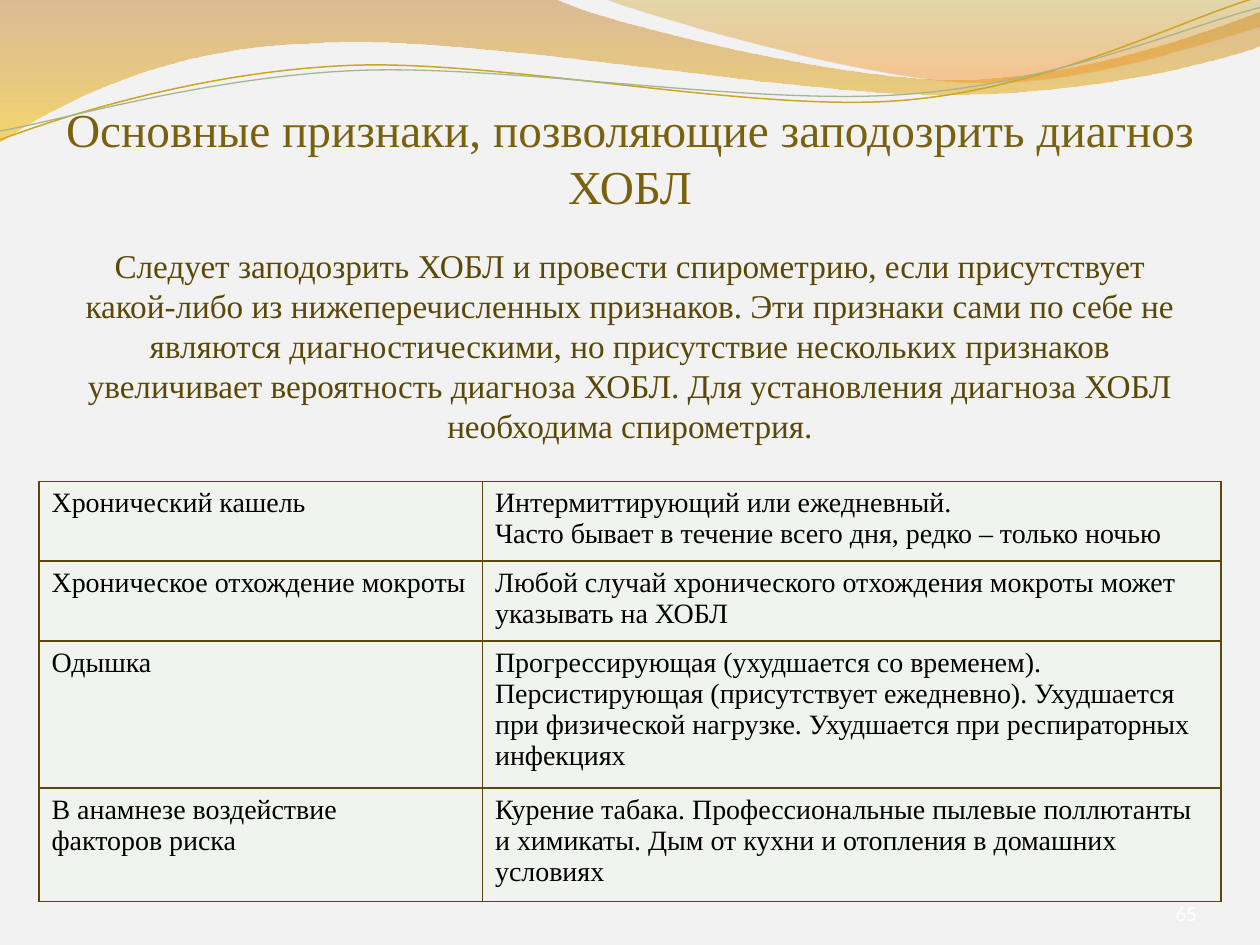
from pptx import Presentation
from pptx.dml.color import RGBColor
from pptx.enum.text import MSO_ANCHOR, PP_ALIGN
from pptx.oxml import parse_xml
from pptx.oxml.ns import nsdecls
from pptx.util import Inches, Pt

SERIF = "Times New Roman"
BROWN = "5B4809"

SIGNS = [
    ("Хронический кашель",
     "Интермиттирующий или ежедневный.\n"
     "Часто бывает в течение всего дня, редко – только ночью"),
    ("Хроническое отхождение мокроты",
     "Любой случай хронического отхождения мокроты может указывать на ХОБЛ"),
    ("Одышка",
     "Прогрессирующая (ухудшается со временем). Персистирующая (присутствует "
     "ежедневно). Ухудшается при физической нагрузке. Ухудшается при "
     "респираторных инфекциях"),
    ("В анамнезе воздействие\nфакторов риска",
     "Курение табака. Профессиональные пылевые поллютанты и химикаты. "
     "Дым от кухни и отопления в домашних\nусловиях"),
]


def color(value):
    return RGBColor.from_string(value)


class SlideBuilder:
    def __init__(self, slide, font=SERIF):
        self.slide = slide
        self.font = font

    def background(self, value):
        fill = self.slide.background.fill
        fill.solid()
        fill.fore_color.rgb = color(value)

    def outline(self, start, segments, close):
        """Draw segments of one point as lines and of three points as curves."""
        builder = self.slide.shapes.build_freeform(*map(Inches, start), scale=1.0)
        builder.add_line_segments(
            [(Inches(x), Inches(y)) for segment in segments for x, y in segment],
            close=close)
        shape = builder.convert_to_shape()
        shape.shadow.inherit = False
        line_parts = iter(shape.element.xpath(".//a:lnTo"))
        for segment in segments:
            parts = [next(line_parts) for _ in segment]
            if len(parts) == 3:
                bezier = parse_xml(f'<a:cubicBezTo {nsdecls("a")}/>')
                parts[0].addprevious(bezier)
                for part in parts:
                    bezier.append(part[0])
                    part.getparent().remove(part)
        return shape

    def wave(self, start, segments, stops):
        """Add a filled wave; stops are (position, colour, opacity percent)."""
        shape = self.outline(start, segments, True)
        shape.line.fill.background()
        shape.fill.gradient()
        shape.fill.gradient_angle = 270
        for stop, (position, value, _) in zip(shape.fill.gradient_stops, stops):
            stop.position = position
            stop.color.rgb = color(value)
        for element, (_, _, opacity) in zip(
                shape.element.spPr.xpath(".//a:gs/a:srgbClr"), stops):
            element.append(parse_xml(
                f'<a:alpha {nsdecls("a")} val="{opacity * 1000}"/>'))

    def strand(self, start, segments, value, width):
        shape = self.outline(start, segments, False)
        shape.fill.background()
        shape.line.color.rgb = color(value)
        shape.line.width = Pt(width)

    def format_text(self, text_frame, size, value, align, font=None):
        for paragraph in text_frame.paragraphs:
            paragraph.alignment = align
            for run in paragraph.runs:
                run.font.name = font or self.font
                run.font.size = Pt(size)
                run.font.color.rgb = color(value)

    def text(self, content, box, size, value, anchor=MSO_ANCHOR.TOP,
             align=PP_ALIGN.CENTER, margins=(0.1, 0.05, 0.1, 0.05), font=None):
        text_frame = self.slide.shapes.add_textbox(*map(Inches, box)).text_frame
        text_frame.word_wrap = True
        text_frame.vertical_anchor = anchor
        (text_frame.margin_left, text_frame.margin_top,
         text_frame.margin_right, text_frame.margin_bottom) = map(Inches, margins)
        text_frame.text = content
        self.format_text(text_frame, size, value, align, font)

    def cell_border(self, cell, value, width):
        properties = cell._tc.get_or_add_tcPr()
        for index, side in enumerate(("lnL", "lnR", "lnT", "lnB")):
            properties.insert(index, parse_xml(
                f'<a:{side} {nsdecls("a")} w="{Pt(width)}"><a:solidFill>'
                f'<a:srgbClr val="{value}"/></a:solidFill></a:{side}>'))

    def table(self, rows, left, top, widths, row_height):
        """Add a table whose rows grow from row_height to fit their text."""
        table = self.slide.shapes.add_table(
            len(rows), len(widths), Inches(left), Inches(top),
            Inches(sum(widths)), Inches(row_height * len(rows))).table
        table.first_row = table.horz_banding = False
        for column, width in zip(table.columns, widths):
            column.width = Inches(width)
        for row, contents in zip(table.rows, rows):
            row.height = Inches(row_height)
            for cell, content in zip(row.cells, contents):
                cell.text_frame.text = content
                cell.fill.solid()
                cell.fill.fore_color.rgb = color("F0F3EE")
                self.format_text(cell.text_frame, 16, "000000", PP_ALIGN.LEFT)
                self.cell_border(cell, BROWN, 1)


def main():
    presentation = Presentation()
    presentation.slide_width = Inches(10)
    presentation.slide_height = Inches(7.5)
    builder = SlideBuilder(presentation.slides.add_slide(presentation.slide_layouts[6]))
    builder.background("F2F2F2")

    builder.wave((0, 0), [
        ((4.4, -0.01),),
        ((4.76, 0.17), (6.64, 0.63), (7.58, 0.63)),
        ((8.53, 0.63), (9.58, 0.26), (10, 0.09)),
        ((10.01, 0.36),),
        ((9.83, 0.44), (8.7, 0.76), (7.46, 0.75)),
        ((6.22, 0.75), (3.82, 0.28), (2.57, 0.34)),
        ((1.29, 0.36), (0.46, 0.83), (-0.01, 1.13)),
    ], [(0, "C07A28", 45), (1, "F7BF00", 55)])
    builder.wave((4.79, -0.01), [
        ((5.09, 0.11), (6.82, 0.62), (7.69, 0.65)),
        ((8.56, 0.69), (9.61, 0.32), (10, 0.21)),
        ((10, 0),),
    ], [(0, "C09709", 30), (0.8, "F59320", 45)])
    builder.strand((0, 1.11), [
        ((0.48, 0.93), (1.58, 0.57), (2.77, 0.52)),
        ((3.95, 0.47), (5.93, 0.89), (7.13, 0.8)),
        ((8.33, 0.71), (9.38, 0.15), (9.98, -0.02)),
    ], "CCA624", 0.85)
    builder.strand((0, 1.04), [
        ((0.47, 0.96), (1.64, 0.61), (2.83, 0.56)),
        ((4.03, 0.51), (5.97, 0.84), (7.17, 0.75)),
        ((8.36, 0.67), (9.41, 0.21), (10, 0.06)),
    ], "A5B592", 0.75)

    builder.text("Основные признаки, позволяющие заподозрить диагноз ХОБЛ",
                 (0.5, 0.97, 9, 0.73), 27, "7A610D",
                 anchor=MSO_ANCHOR.BOTTOM, margins=(0, 0.05, 0, 0))
    builder.text(
        "Следует заподозрить ХОБЛ и провести спирометрию, если присутствует "
        "какой-либо из нижеперечисленных признаков. Эти признаки сами по себе не "
        "являются диагностическими, но присутствие нескольких признаков "
        "увеличивает вероятность диагноза ХОБЛ. Для установления диагноза ХОБЛ "
        "необходима спирометрия.", (0.5, 1.9, 9, 1.72), 19, BROWN)
    builder.table(SIGNS, 0.31, 3.82, (3.52, 5.86), 0.41)
    builder.text("65", (8.5, 7.05, 1, 0.4), 12, "FFFFFF", anchor=MSO_ANCHOR.MIDDLE,
                 align=PP_ALIGN.RIGHT, margins=(0, 0, 0, 0), font="Calibri")
    presentation.save("out.pptx")


if __name__ == "__main__":
    main()
